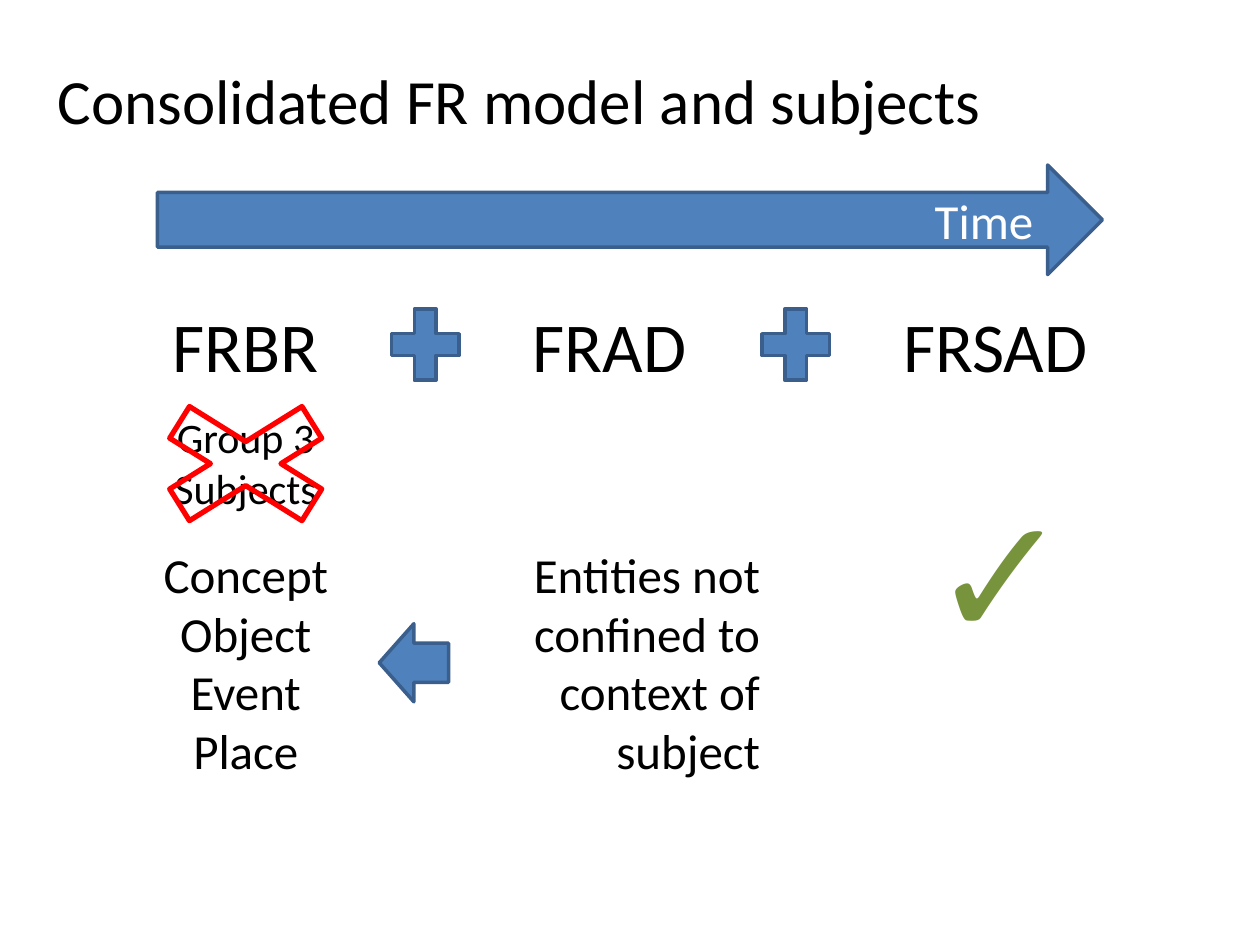
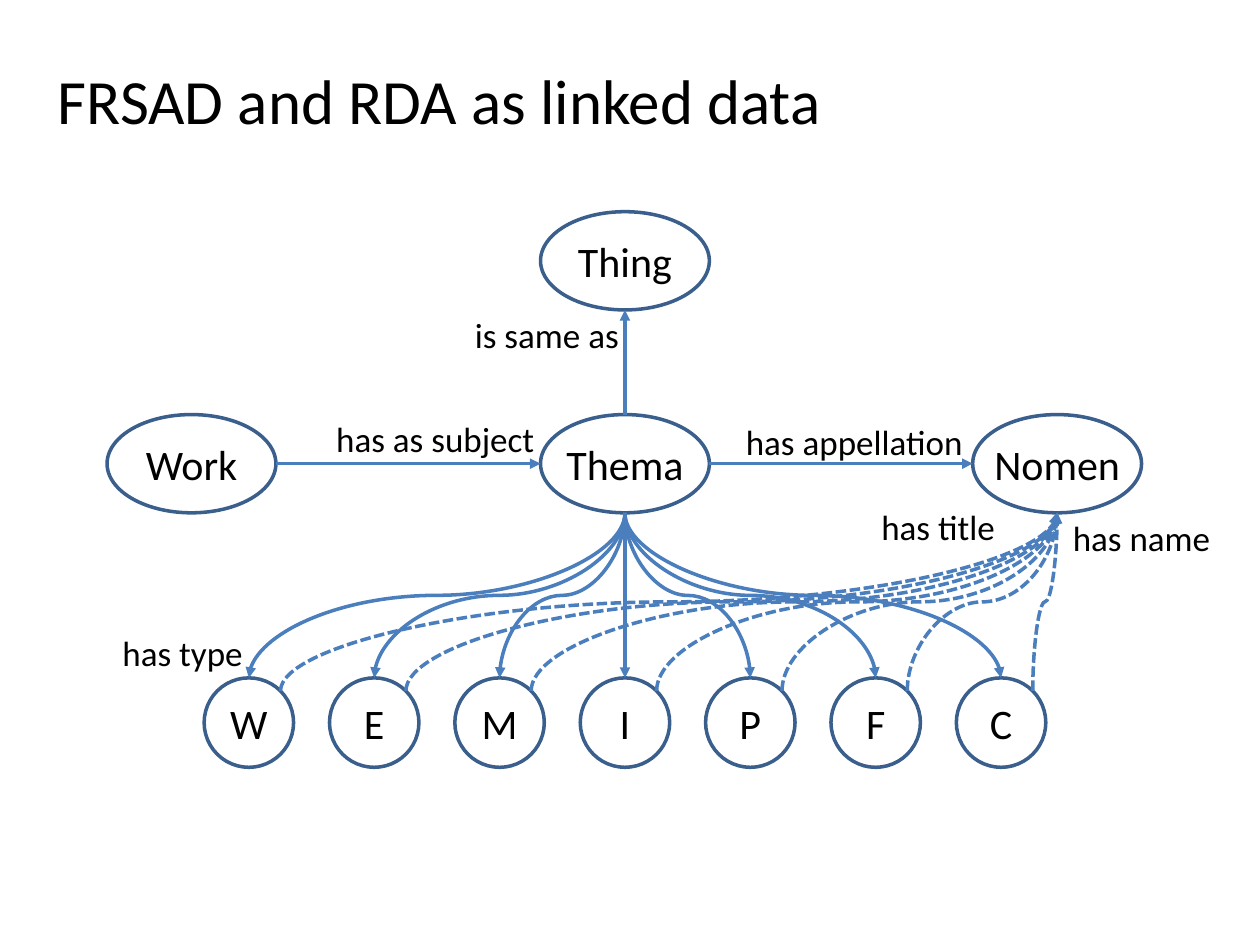
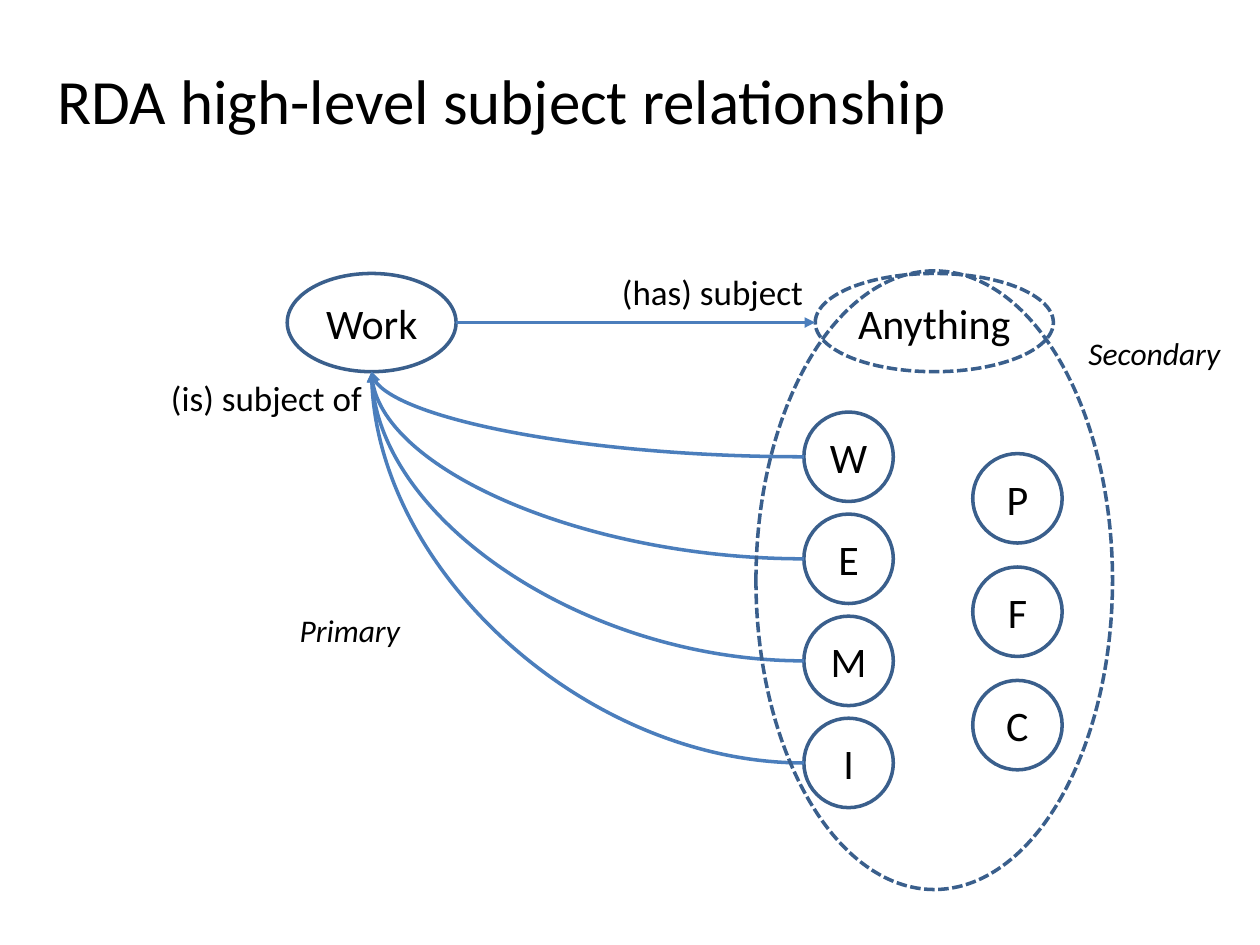
"""Build three slides on FR models, linked data and RDA subject relationships."""
import math
from dataclasses import dataclass

from lxml import etree
from pptx import Presentation
from pptx.dml.color import RGBColor
from pptx.enum.dml import MSO_LINE
from pptx.enum.shapes import MSO_CONNECTOR, MSO_SHAPE
from pptx.enum.text import MSO_AUTO_SIZE, PP_ALIGN
from pptx.oxml.ns import qn
from pptx.shapes.autoshape import Shape
from pptx.shapes.shapetree import GroupShapes, SlideShapes
from pptx.util import Inches, Pt

CURVE = MSO_CONNECTOR.CURVE
DASH = MSO_LINE.SQUARE_DOT
ELLIPSE = MSO_SHAPE.OVAL
PLUS = MSO_SHAPE.MATH_PLUS
CROSS = MSO_SHAPE.MATH_MULTIPLY
RIGHT_ARROW = MSO_SHAPE.RIGHT_ARROW
LEFT_ARROW = MSO_SHAPE.LEFT_ARROW
LEFT, CENTER, RIGHT = PP_ALIGN.LEFT, PP_ALIGN.CENTER, PP_ALIGN.RIGHT
FIT = MSO_AUTO_SIZE.SHAPE_TO_FIT_TEXT

COLORS = {
    "text": "000000",
    "on_fill": "FFFFFF",
    "fill": "4F81BD",
    "outline": "3A5F8C",
    "relation": "4B7EBC",
    "cross": "FF0000",
    "tick": "77933C",
}
FONT = "Calibri"
NODE_WIDTH, NODE_HEIGHT, CIRCLE = 1.34, 0.78, 0.71
HORIZONTAL, VERTICAL, REVERSED = 0, 1, 2

Point = tuple[float, float]
Shapes = SlideShapes | GroupShapes


@dataclass(frozen=True)
class Label:
    """Text lines in a box, with their style."""

    lines: tuple[str, ...]
    left: float
    top: float
    width: float
    height: float
    size: int = 20
    align: PP_ALIGN = LEFT
    color: str = "text"
    inset: float = 0.1
    wrap: bool = False
    italic: bool = False


@dataclass(frozen=True)
class Node:
    """An ellipse named by the text at its centre."""

    name: str
    left: float
    top: float
    width: float = NODE_WIDTH
    height: float = NODE_HEIGHT
    dashed: bool = False

    def side(self, x: float, y: float) -> Point:
        """Return a point given as offsets from the centre in half sizes."""
        return (self.left + self.width / 2 * (1 + x),
                self.top + self.height / 2 * (1 + y))


@dataclass(frozen=True)
class Relation:
    """A curved arrow, turned by quarter turns."""

    start: Point
    end: Point
    turns: int = HORIZONTAL
    preset: str = "curvedConnector3"
    dashed: bool = False


def rgb(key: str) -> RGBColor:
    """Look up a colour."""
    return RGBColor.from_string(COLORS[key])


def draw_label(shapes: Shapes, label: Label) -> None:
    """Draw a text box, one paragraph a line."""
    box = shapes.add_textbox(Inches(label.left), Inches(label.top),
                             Inches(label.width), Inches(label.height))
    frame = box.text_frame
    frame.word_wrap = label.wrap
    frame.auto_size = FIT
    frame.margin_left = frame.margin_right = Inches(label.inset)
    frame.margin_top = frame.margin_bottom = Inches(min(label.inset, 0.05))
    for index, line in enumerate(label.lines):
        paragraph = frame.add_paragraph() if index else frame.paragraphs[0]
        paragraph.alignment = label.align
        run = paragraph.add_run()
        run.text = line
        run.font.name = FONT
        run.font.size = Pt(label.size)
        run.font.italic = label.italic
        run.font.color.rgb = rgb(label.color)


def draw_shape(shapes: Shapes, kind: MSO_SHAPE, left: float, top: float, width: float,
               height: float, fill: str | None = None, line: str = "outline",
               line_width: float = 2) -> Shape:
    """Draw an outlined preset shape, filled or empty."""
    shape = shapes.add_shape(kind, Inches(left), Inches(top), Inches(width), Inches(height))
    shape.shadow.inherit = False
    if fill:
        shape.fill.solid()
        shape.fill.fore_color.rgb = rgb(fill)
    else:
        shape.fill.background()
    shape.line.color.rgb = rgb(line)
    shape.line.width = Pt(line_width)
    return shape


def draw_node(shapes: SlideShapes, node: Node) -> None:
    """Draw an ellipse grouped with its name."""
    members = shapes.add_group_shape().shapes
    ellipse = draw_shape(members, ELLIPSE, node.left, node.top, node.width, node.height)
    if node.dashed:
        ellipse.line.dash_style = DASH
    width, height = node.width - 0.15, 0.48
    center_x, center_y = node.side(0, 0)
    draw_label(members, Label((node.name,), center_x - width / 2, center_y - height / 2,
                              width, height, 24, CENTER, inset=0.04, wrap=True))


def draw_relation(shapes: SlideShapes, relation: Relation) -> None:
    """Draw a curved arrow by turning an unrotated one about its middle."""
    (x1, y1), (x2, y2) = relation.start, relation.end
    middle_x, middle_y = (x1 + x2) / 2, (y1 + y2) / 2
    dx, dy = x2 - x1, y2 - y1
    for _ in range(relation.turns):
        dx, dy = dy, -dx
    arrow = shapes.add_connector(CURVE, Inches(middle_x - dx / 2), Inches(middle_y - dy / 2),
                                 Inches(middle_x + dx / 2), Inches(middle_y + dy / 2))
    arrow.line.color.rgb = rgb("relation")
    arrow.line.width = Pt(2)
    if relation.dashed:
        arrow.line.dash_style = DASH
    properties = arrow._element.spPr
    if relation.turns:
        properties.find(qn("a:xfrm")).set("rot", str(relation.turns * 5400000))
    properties.find(qn("a:prstGeom")).set("prst", relation.preset)
    etree.SubElement(properties.find(qn("a:ln")), qn("a:tailEnd"), type="triangle")
    etree.SubElement(properties, qn("a:effectLst"))


def relation_label(text: str, left: float, top: float, width: float) -> Label:
    """Describe the name of a relation."""
    return Label((text,), left, top, width, 0.42, align=CENTER, inset=0.04)


def add_titled_slide(deck: Presentation, title: str, width: float) -> SlideShapes:
    """Add a blank slide with a title and return its shapes."""
    shapes = deck.slides.add_slide(deck.slide_layouts[6]).shapes
    draw_label(shapes, Label((title,), 0.36, 0.44, width, 0.71, 36))
    return shapes


def draw_all(shapes: SlideShapes, nodes: list[Node], relations: list[Relation],
             labels: list[Label]) -> None:
    """Draw a diagram of nodes, relations and labels."""
    for node in nodes:
        draw_node(shapes, node)
    for relation in relations:
        draw_relation(shapes, relation)
    for label in labels:
        draw_label(shapes, label)


def build_consolidated_model(deck: Presentation) -> None:
    """Build the slide on the consolidated model."""
    shapes = add_titled_slide(deck, "Consolidated FR model and subjects", 7.59)
    for model, left, width in (("FRBR", 1.27, 1.37), ("FRAD", 4.13, 1.43),
                               ("FRSAD", 7.07, 1.68)):
        draw_label(shapes, Label((model,), left, 2.35, width, 0.77, 40))
    for plus_left in (3.01, 5.95):
        draw_shape(shapes, PLUS, plus_left, 2.35, 0.73, 0.77, "fill")
    timeline = shapes.add_group_shape().shapes
    draw_shape(timeline, RIGHT_ARROW, 1.25, 1.31, 7.5, 0.87, "fill")
    draw_label(timeline, Label(("Time",), 7.32, 1.46, 0.99, 0.57, 28, color="on_fill"))
    for label in (
        Label(("Group 3", "Subjects"), 1.28, 3.22, 1.34, 0.91, 24, CENTER),
        Label(("Concept", "Object", "Event", "Place"), 1.19, 4.27, 1.52, 1.99, 28, CENTER),
        Label(("✓",), 7.29, 3.68, 1.23, 1.72, 96, color="tick"),
        Label(("Entities not confined to context of subject",),
              3.86, 4.27, 2.27, 1.99, 28, RIGHT, wrap=True),
    ):
        draw_label(shapes, label)
    draw_shape(shapes, CROSS, 0.94, 3.05, 2.02, 1.26, line="cross", line_width=3)
    draw_shape(shapes, LEFT_ARROW, 3.01, 4.95, 0.55, 0.62, "fill")


def build_linked_data(deck: Presentation) -> None:
    """Build the slide on FRSAD and RDA as linked data."""
    shapes = add_titled_slide(deck, "FRSAD and RDA as linked data", 6.31)
    work, thema, nomen = (Node(name, left, 3.29) for name, left in
                          (("Work", 0.85), ("Thema", 4.29), ("Nomen", 7.72)))
    thing = Node("Thing", thema.left, 1.68)
    pitch = (7.59 - 1.62) / 6
    entities = [Node(name, 1.62 + index * pitch, 5.38, CIRCLE, CIRCLE)
                for index, name in enumerate("WEMIPFC")]
    diagonal = math.sqrt(0.5)
    relations = [
        Relation(work.side(1, 0), thema.side(-1, 0)),
        Relation(thema.side(1, 0), nomen.side(-1, 0)),
        Relation(thema.side(0, -1), thing.side(0, 1), VERTICAL),
    ]
    relations += [Relation(thema.side(0, 1), entity.side(0, -1), VERTICAL)
                  for entity in entities]
    relations += [Relation(entity.side(diagonal, -diagonal), nomen.side(0, 1), VERTICAL,
                           dashed=True) for entity in entities]
    draw_all(shapes, [work, thema, nomen, thing, *entities], relations, [
        relation_label("has as subject", 2.62, 3.27, 1.67),
        relation_label("has appellation", 5.87, 3.3, 1.82),
        relation_label("is same as", 3.72, 2.45, 1.24),
        relation_label("has type", 0.93, 4.97, 1.04),
        relation_label("has title", 6.95, 3.97, 0.99),
        relation_label("has name", 8.47, 4.06, 1.18),
    ])


def build_subject_relationship(deck: Presentation) -> None:
    """Build the slide on the high-level subject relationship."""
    shapes = add_titled_slide(deck, "RDA high-level subject relationship", 7.32)
    work = Node("Work", 2.28, 2.17)
    anything = Node("Anything", 6.47, 2.17, 1.89, dashed=True)
    primary = [Node(name, 6.38, 3.27 + index * 0.81, CIRCLE, CIRCLE)
               for index, name in enumerate("WEMI")]
    secondary = [Node(name, 7.72, 3.6 + index * 0.9, CIRCLE, CIRCLE)
                 for index, name in enumerate("PFC")]
    relations = [Relation(work.side(1, 0), anything.side(-1, 0))]
    relations += [Relation(entity.side(-1, 0), work.side(0, 1), REVERSED, "curvedConnector2")
                  for entity in primary]
    draw_all(shapes, [work, anything, *primary, *secondary], relations, [
        relation_label("(has) subject", 4.89, 2.11, 1.53),
        relation_label("(is) subject of", 1.31, 2.95, 1.61),
        Label(("Primary",), 2.28, 4.8, 1, 0.4, 18, italic=True),
        Label(("Secondary",), 8.54, 2.6, 1.27, 0.4, 18, italic=True),
    ])
    scope = draw_shape(shapes, ELLIPSE, 6, 2.15, 2.83, 4.91)
    scope.line.dash_style = DASH


def main() -> None:
    """Build and save the presentation."""
    deck = Presentation()
    deck.slide_width, deck.slide_height = Inches(10), Inches(7.5)
    build_consolidated_model(deck)
    build_linked_data(deck)
    build_subject_relationship(deck)
    deck.save("out.pptx")


if __name__ == "__main__":
    main()
